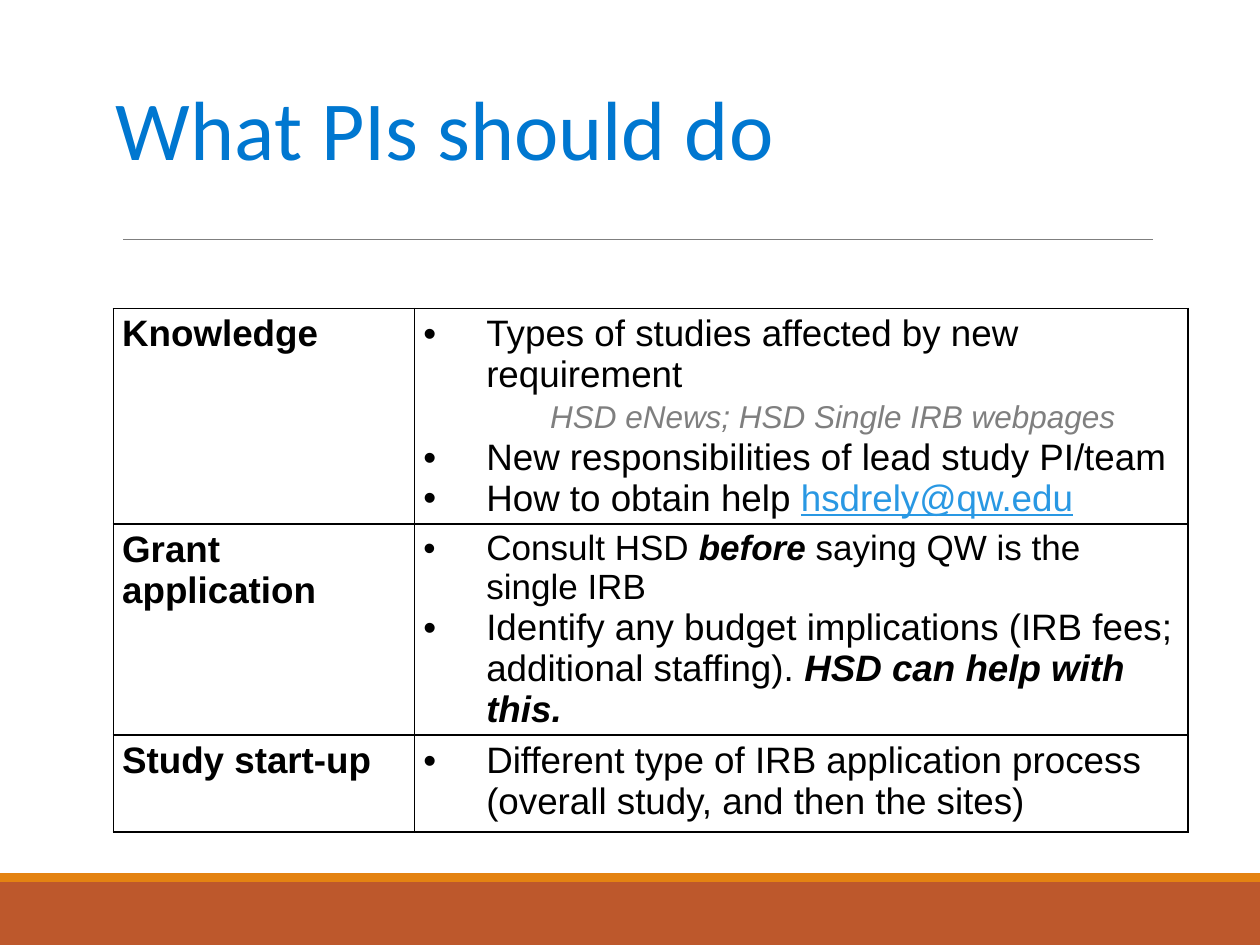
"""Build a slide with a table of what principal investigators should do."""
from lxml.etree import SubElement
from pptx import Presentation
from pptx.dml.color import RGBColor
from pptx.enum.shapes import MSO_CONNECTOR, MSO_SHAPE
from pptx.enum.text import MSO_ANCHOR, MSO_AUTO_SIZE, PP_ALIGN
from pptx.oxml.ns import qn
from pptx.util import Inches, Pt

BLACK = RGBColor(0x00, 0x00, 0x00)
GRAY = RGBColor(0x7F, 0x7F, 0x7F)
TITLE_BLUE = RGBColor(0x00, 0x77, 0xD0)
LINK_BLUE = RGBColor(0x29, 0x98, 0xE3)
RUST = RGBColor(0xBD, 0x58, 0x2C)
ORANGE = RGBColor(0xE4, 0x83, 0x12)

STRONG = {"bold": True, "italic": True}
SOURCE = {"size": 18, "italic": True, "color": GRAY}
LINK = {"color": LINK_BLUE, "underline": True}
SMALL = {"size": 20}

ROWS = [
    ("Knowledge", 1.7, [
        [("Types of studies affected by new requirement", {})],
        [("HSD eNews; HSD Single IRB webpages", SOURCE)],
        [("New responsibilities of lead study PI/team", {})],
        [("How to obtain help ", {}), ("hsdrely@qw.edu", LINK)],
    ]),
    ("Grant application", 1.67, [
        [("Consult HSD ", SMALL), ("before", {**SMALL, **STRONG}),
         (" saying QW is the single IRB", SMALL)],
        [("Identify any budget implications (IRB fees; additional staffing). ", {}),
         ("HSD can help with this.", STRONG)],
    ]),
    ("Study start-up", 0.77, [
        [("Different type of IRB application process (overall study, and then the sites)", {})],
    ]),
]


def add_text(para, text, size=21, font="Arial", color=BLACK, bold=False, italic=False,
             underline=False):
    span = para.add_run()
    span.text = text
    span.font.size = Pt(size)
    span.font.name = font
    span.font.color.rgb = color
    span.font.bold = bold
    span.font.italic = italic
    span.font.underline = underline


def format_cell(cell):
    cell.margin_left = cell.margin_right = Inches(0.07)
    cell.margin_top = cell.margin_bottom = Inches(0.04)
    properties = cell._tc.get_or_add_tcPr()
    for side in ("a:lnL", "a:lnR", "a:lnT", "a:lnB"):
        border = SubElement(properties, qn(side), w=str(Pt(1)))
        fill = SubElement(border, qn("a:solidFill"))
        SubElement(fill, qn("a:srgbClr"), val=str(BLACK))
    cell.fill.background()


deck = Presentation()
deck.slide_width, deck.slide_height = Inches(10), Inches(7.5)
page = deck.slides.add_slide(deck.slide_layouts[5])

for top, height, color in ((7, 0.5, RUST), (6.93, 0.07, ORANGE)):
    band = page.shapes.add_shape(
        MSO_SHAPE.RECTANGLE, Inches(0), Inches(top), Inches(10), Inches(height))
    band.shadow.inherit = False
    band.fill.solid()
    band.fill.fore_color.rgb = color
    band.line.fill.background()

rule = page.shapes.add_connector(
    MSO_CONNECTOR.STRAIGHT, Inches(0.98), Inches(1.9), Inches(9.15), Inches(1.9))
rule.line.color.rgb = GRAY
rule.line.width = Pt(0.75)
SubElement(rule._element.spPr, qn("a:effectLst"))

title = page.shapes.title
title.left, title.top = Inches(0.82), Inches(0.64)
title.width, title.height = Inches(5.48), Inches(0.82)
frame = title.text_frame
frame.vertical_anchor = MSO_ANCHOR.BOTTOM
frame.auto_size = MSO_AUTO_SIZE.NONE
frame.word_wrap = False
heading = frame.paragraphs[0]
heading.alignment = PP_ALIGN.LEFT
heading.line_spacing = 0.85
add_text(heading, "What PIs should do", size=48, font="Calibri", color=TITLE_BLUE)

table = page.shapes.add_table(
    len(ROWS), 2, Inches(0.9), Inches(2.45), Inches(8.53),
    Inches(sum(height for _, height, _ in ROWS))).table
table.first_row = table.horz_banding = False
table.columns[0].width, table.columns[1].width = Inches(2.39), Inches(6.14)

for row, (stage, height, items) in enumerate(ROWS):
    table.rows[row].height = Inches(height)
    stage_cell, tasks_cell = table.cell(row, 0), table.cell(row, 1)
    format_cell(stage_cell)
    format_cell(tasks_cell)
    add_text(stage_cell.text_frame.paragraphs[0], stage, bold=True)
    for index, spans in enumerate(items):
        tasks = tasks_cell.text_frame
        para = tasks.add_paragraph() if index else tasks.paragraphs[0]
        properties = para._p.get_or_add_pPr()
        properties.set("marL", str(Inches(0.5)))
        if spans[0][1] is SOURCE:
            properties.set("indent", "0")
            para.alignment = PP_ALIGN.CENTER
            para.space_before, para.space_after = Pt(2.7), Pt(0.7)
        else:
            properties.set("indent", str(Inches(-0.5)))
            bullet_color = SubElement(properties, qn("a:buClr"))
            SubElement(bullet_color, qn("a:srgbClr"), val=str(BLACK))
            SubElement(properties, qn("a:buFont"), typeface="Arial")
            SubElement(properties, qn("a:buChar"), char="•")
        for text, style in spans:
            add_text(para, text, **style)

deck.save("out.pptx")
